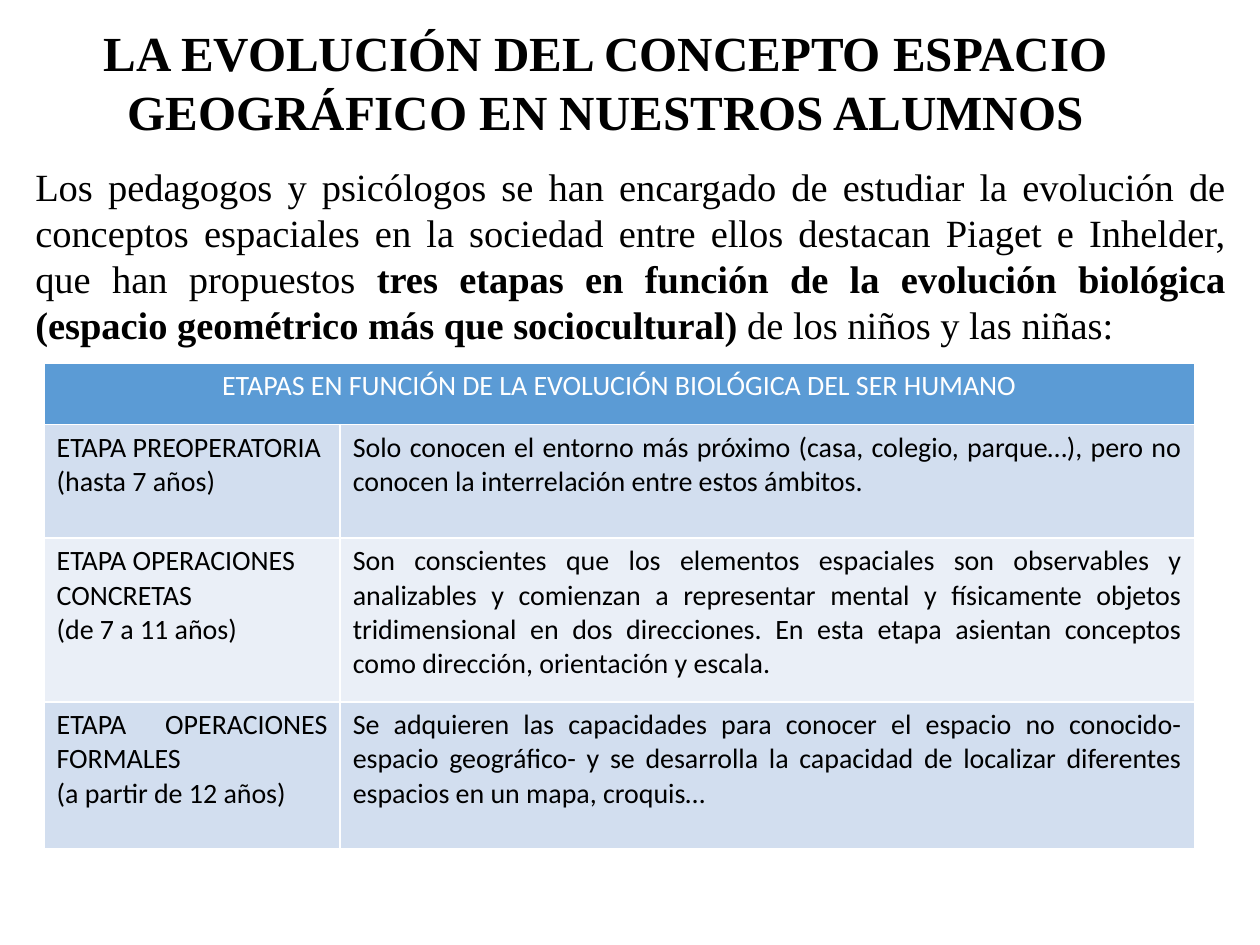
"""Build a slide on how pupils develop the concept of geographic space."""
import pptx
import pptx.dml.color
import pptx.enum.text
import pptx.oxml.ns
import pptx.util
from lxml import etree

Inches = pptx.util.Inches
Align = pptx.enum.text.PP_ALIGN
COLORS = {"text": "000000", "header_text": "FFFFFF", "header": "5B9BD5",
          "odd": "D2DEEF", "even": "EAEFF7"}
FORMATS = {
    "title": {"name": "Times New Roman", "size": pptx.util.Pt(28), "bold": True},
    "body": {"name": "Times New Roman", "size": pptx.util.Pt(22), "bold": False},
    "cell": {"name": "Calibri", "size": pptx.util.Pt(16), "bold": False},
}


def format_font(font, style, color="text"):
    """Apply a named format and colour to a font."""
    for name, value in FORMATS[style].items():
        setattr(font, name, value)
    font.color.rgb = pptx.dml.color.RGBColor.from_string(COLORS[color])


def fill_cell(cell, lines, alignment, fill, color="text"):
    """Write lines of text into a filled table cell."""
    cell.fill.solid()
    cell.fill.fore_color.rgb = pptx.dml.color.RGBColor.from_string(COLORS[fill])
    cell.text_frame.text = "\n".join(lines)
    for paragraph in cell.text_frame.paragraphs:
        paragraph.alignment = alignment
        for run in paragraph.runs:
            format_font(run.font, "cell", color)


presentation = pptx.Presentation()
presentation.slide_width = Inches(10)
presentation.slide_height = Inches(7.5)
slide = presentation.slides.add_slide(presentation.slide_layouts[1])

text_blocks = [
    (slide.shapes.title, "title", (0.2, 0.13, 9.21, 1.04), Align.CENTER,
     [("LA EVOLUCIÓN DEL CONCEPTO ESPACIO GEOGRÁFICO EN NUESTROS ALUMNOS", True)]),
    (slide.placeholders[1], "body", (0.18, 1.24, 9.65, 1.58), Align.JUSTIFY,
     [("Los pedagogos y psicólogos se han encargado de estudiar la evolución de "
       "conceptos espaciales en la sociedad entre ellos destacan Piaget e Inhelder, "
       "que han propuestos ", False),
      ("tres etapas en función de la evolución biológica "
       "(espacio geométrico más que sociocultural)", True),
      (" de los niños y las niñas:", False)]),
]
for shape, style, box, alignment, pieces in text_blocks:
    shape.left, shape.top, shape.width, shape.height = map(Inches, box)
    frame = shape.text_frame
    frame.word_wrap = True
    frame.auto_size = pptx.enum.text.MSO_AUTO_SIZE.SHAPE_TO_FIT_TEXT
    frame.vertical_anchor = pptx.enum.text.MSO_ANCHOR.TOP
    paragraph = frame.paragraphs[0]
    paragraph.alignment = alignment
    paragraph.space_before = pptx.util.Pt(0)
    properties = paragraph._p.get_or_add_pPr()
    properties.set("marL", "0")
    properties.set("indent", "0")
    etree.SubElement(properties, pptx.oxml.ns.qn("a:buNone"))
    for text, bold in pieces:
        run = paragraph.add_run()
        run.text = text
        format_font(run.font, style)
        run.font.bold = bold

stages = [
    (["ETAPA PREOPERATORIA (hasta 7 años)"], Align.LEFT,
     "Solo conocen el entorno más próximo (casa, colegio, parque…), pero no conocen "
     "la interrelación entre estos ámbitos."),
    (["ETAPA OPERACIONES CONCRETAS", "(de 7 a 11 años)"], Align.LEFT,
     "Son conscientes que los elementos espaciales son observables y analizables y "
     "comienzan a representar mental y físicamente objetos tridimensional en dos "
     "direcciones. En esta etapa asientan conceptos como dirección, orientación y escala."),
    (["ETAPA OPERACIONES FORMALES", "(a partir de 12 años)"], Align.JUSTIFY,
     "Se adquieren las capacidades para conocer el espacio no conocido- espacio "
     "geográfico- y se desarrolla la capacidad de localizar diferentes espacios en un "
     "mapa, croquis…"),
]
table = slide.shapes.add_table(len(stages) + 1, 2, Inches(0.35), Inches(2.88),
                               Inches(9.13), Inches(3.86)).table
for column, width in zip(table.columns, (2.35, 6.78)):
    column.width = Inches(width)
for row, height in zip(table.rows, (0.49, 0.9, 1.3, 1.17)):
    row.height = Inches(height)

header = table.cell(0, 0)
header.merge(table.cell(0, 1))
fill_cell(header, ["ETAPAS EN FUNCIÓN DE LA EVOLUCIÓN BIOLÓGICA DEL SER HUMANO"],
          Align.CENTER, "header", "header_text")
for index, (stage, alignment, description) in enumerate(stages, start=1):
    band = "odd" if index % 2 else "even"
    fill_cell(table.cell(index, 0), stage, alignment, band)
    fill_cell(table.cell(index, 1), [description], Align.JUSTIFY, band)

presentation.save("out.pptx")
